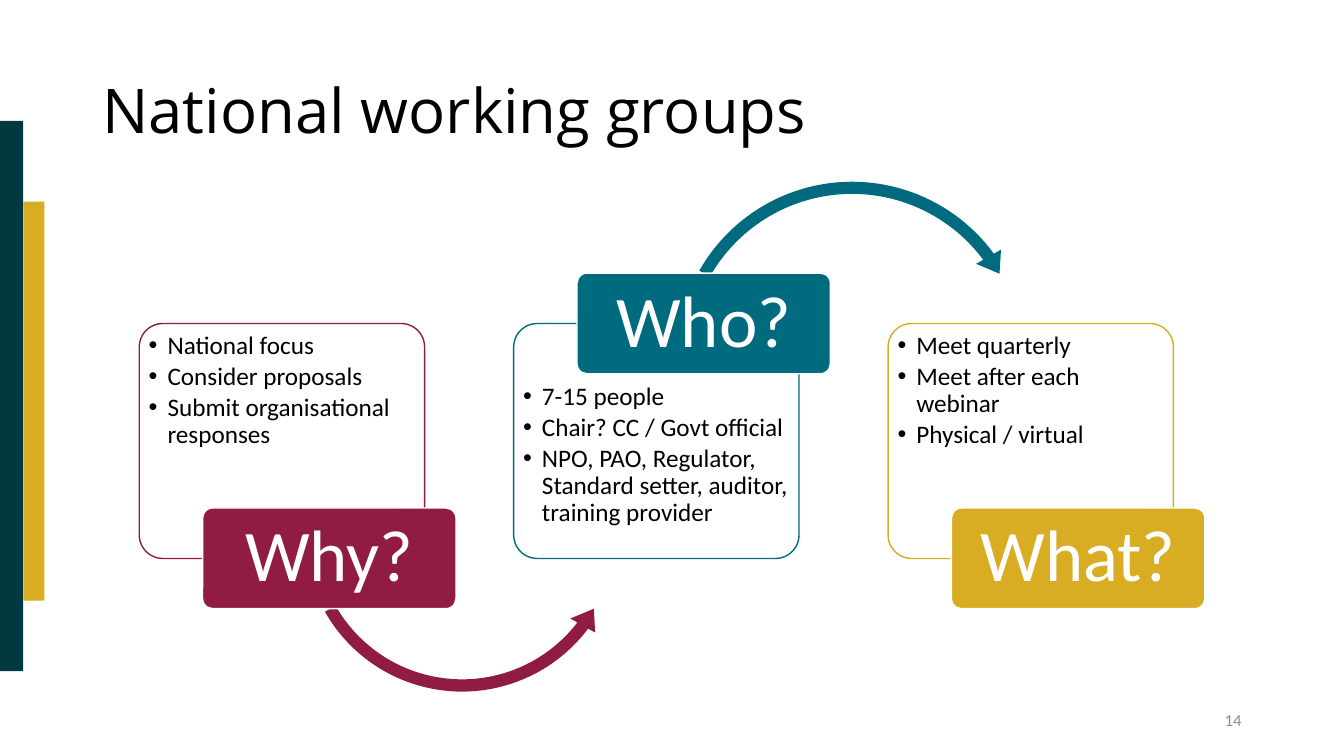
from lxml import etree
from pptx import Presentation
from pptx.dml.color import RGBColor
from pptx.enum import shapes, text
from pptx.oxml import ns
from pptx.util import Pt

BLACK = RGBColor(0x00, 0x00, 0x00)
WHITE = RGBColor(0xFF, 0xFF, 0xFF)
GREY = RGBColor(0x8C, 0x8C, 0x8C)
DARK_TEAL = RGBColor(0x00, 0x3A, 0x40)
TEAL = RGBColor(0x00, 0x6A, 0x7E)
GOLD = RGBColor(0xD8, 0xAD, 0x24)
MAROON = RGBColor(0x90, 0x1D, 0x41)

PANEL_LEFT, PANEL_TOP, PANEL_STEP = 99.5, 231.1, 267.45
PANEL_WIDTH, PANEL_HEIGHT = 203.8, 167.8
TAG_OFFSET, TAG_WIDTH, TAG_HEIGHT = 45.2, 181, 71.9
TAG_HIGH, TAG_LOW = 195.1, 362.9
BULLET_INDENT = 13.5

STAGES = [
    ("Why?", MAROON, False,
     ["National focus", "Consider proposals", "Submit organisational responses"]),
    ("Who?", TEAL, True,
     ["7-15 people", "Chair? CC / Govt official",
      "NPO, PAO, Regulator, Standard setter, auditor, training provider"]),
    ("What?", GOLD, False,
     ["Meet quarterly", "Meet after each webinar", "Physical / virtual"]),
]
ARROWS = {
    "Why?": (shapes.MSO_SHAPE.LEFT_CIRCULAR_ARROW, (211.6, 262.9, 236.9, 236.9),
             (0.037, 4.574, 22.329, 90.245, 0.043)),
    "Who?": (shapes.MSO_SHAPE.CIRCULAR_ARROW, (477.2, 123.9, 262.8, 262.8),
             (0.033, 4.086, 194.159, 125.755, 0.039)),
}


class SlideBuilder:
    def __init__(self, page, font="Calibri"):
        self.page = page
        self.font = font

    def shape(self, kind, bounds, fill, line=None, adjustments=()):
        shape = self.page.shapes.add_shape(kind, *map(Pt, bounds))
        shape.shadow.inherit = False
        shape.fill.solid()
        shape.fill.fore_color.rgb = fill
        if line is None:
            shape.line.fill.background()
        else:
            shape.line.color.rgb = line
            shape.line.width = Pt(1)
        for index, value in enumerate(adjustments):
            shape.adjustments[index] = value
        return shape

    def rounded(self, bounds, fill, line):
        return self.shape(shapes.MSO_SHAPE.ROUNDED_RECTANGLE, bounds, fill, line, (0.1,))

    def frame(self, box, anchor, insets):
        frame = box.text_frame
        frame.word_wrap = True
        frame.vertical_anchor = anchor
        (frame.margin_left, frame.margin_top,
         frame.margin_right, frame.margin_bottom) = map(Pt, insets)
        return frame

    def add_words(self, para, words, size, color, align=text.PP_ALIGN.LEFT, font=None):
        para.alignment = align
        para.line_spacing = 0.9
        span = para.add_run()
        span.text = words
        span.font.size = Pt(size)
        span.font.name = font or self.font
        span.font.color.rgb = color

    def label(self, bounds, words, size, color, align=text.PP_ALIGN.LEFT, font=None):
        box = self.page.shapes.add_textbox(*map(Pt, bounds))
        frame = self.frame(box, text.MSO_ANCHOR.MIDDLE, (7.2, 3.6, 7.2, 3.6))
        self.add_words(frame.paragraphs[0], words, size, color, align, font)

    def panel(self, left, color, items, top_inset):
        box = self.rounded((left, PANEL_TOP, PANEL_WIDTH, PANEL_HEIGHT), WHITE, color)
        frame = self.frame(box, text.MSO_ANCHOR.TOP, (1.8, top_inset, 1.8, 1.8))
        for index, item in enumerate(items):
            para = frame.add_paragraph() if index else frame.paragraphs[0]
            self.add_words(para, item, 18, BLACK)
            para.space_after = Pt(2.7)
            properties = para._p.get_or_add_pPr()
            properties.set("marL", str(Pt(BULLET_INDENT)))
            properties.set("indent", str(-Pt(BULLET_INDENT)))
            etree.SubElement(properties, ns.qn("a:buFont"), typeface="Arial")
            etree.SubElement(properties, ns.qn("a:buChar"), char="•")

    def tag(self, left, top, color, words):
        box = self.rounded((left, top, TAG_WIDTH, TAG_HEIGHT), color, WHITE)
        frame = self.frame(box, text.MSO_ANCHOR.MIDDLE, (8, 5, 8, 5))
        self.add_words(frame.paragraphs[0], words, 52, WHITE, text.PP_ALIGN.CENTER)


def main():
    deck = Presentation()
    deck.slide_width, deck.slide_height = Pt(960), Pt(540)
    page = deck.slides.add_slide(deck.slide_layouts[6])
    builder = SlideBuilder(page)

    builder.shape(shapes.MSO_SHAPE.RECTANGLE, (0, 86.4, 16.6, 393.1), DARK_TEAL)
    builder.shape(shapes.MSO_SHAPE.RECTANGLE, (16.6, 144, 15.1, 285.1), GOLD)
    builder.label((66, 28.8, 828, 104.4), "National working groups", 44, BLACK,
                  font="Open Sans")
    builder.label((678, 500.5, 216, 28.8), "14", 12, GREY, text.PP_ALIGN.RIGHT)

    for index, (name, color, high, items) in enumerate(STAGES):
        left = PANEL_LEFT + index * PANEL_STEP
        builder.panel(left, color, items, 37.8 if high else 1.8)
        if name in ARROWS:
            kind, bounds, adjustments = ARROWS[name]
            builder.shape(kind, bounds, color, adjustments=adjustments)
        builder.tag(left + TAG_OFFSET, TAG_HIGH if high else TAG_LOW, color, name)

    deck.save("out.pptx")


if __name__ == "__main__":
    main()
